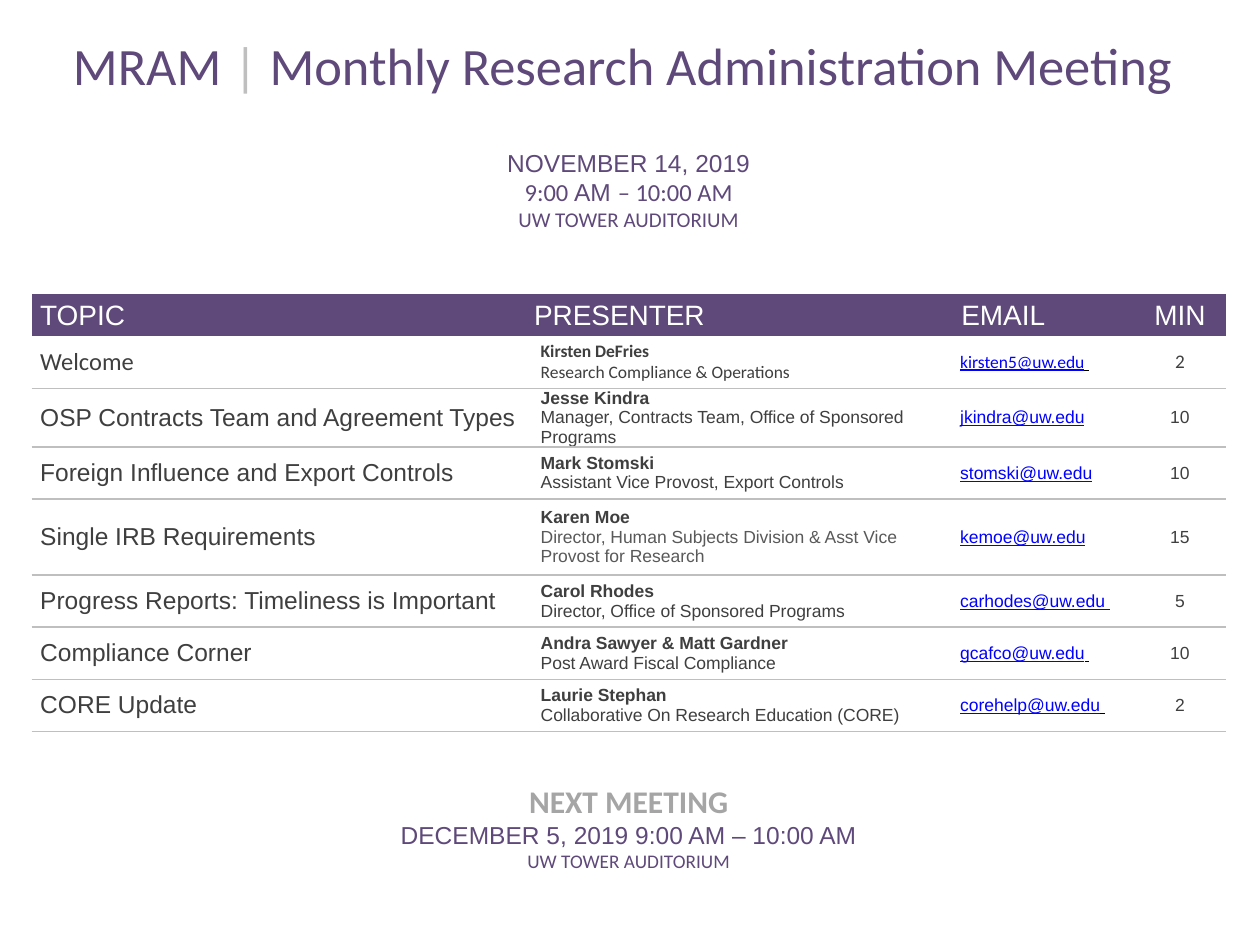
from lxml.etree import SubElement
from pptx import Presentation
from pptx.dml.color import RGBColor
from pptx.enum.text import MSO_ANCHOR, PP_ALIGN
from pptx.oxml.ns import qn
from pptx.util import Pt

PLUM, GRAY, INK, BLUE, WHITE = "5F497A", "BFBFBF", "3F3F3F", "0000FF", "FFFFFF"
SANS, LATO = "Arial", "Calibri"
MID, LOW, TOP = MSO_ANCHOR.MIDDLE, MSO_ANCHOR.BOTTOM, MSO_ANCHOR.TOP
COLS = [282.25, 239.75, 108, 52.5]
ROWS = [44.5, 111.5, 24, 29.75, 33.5, 29.75, 43.5, 29.75, 29.75, 29.75, 81]
HEADS = ["TOPIC", "PRESENTER", " EMAIL", "MIN"]

# Topic, presenter, role, email, blank after it (colour or None), minutes
ITEMS = [
    ("Welcome", "Kirsten DeFries", "Research Compliance & Operations",
     "kirsten5@uw.edu", "000000", "2"),
    ("OSP Contracts Team and Agreement Types", "Jesse Kindra",
     "Manager, Contracts Team, Office of Sponsored Programs",
     "jkindra@uw.edu", None, "10"),
    ("Foreign Influence and Export Controls", "Mark Stomski",
     "Assistant Vice Provost, Export Controls",
     "stomski@uw.edu", None, "10"),
    ("Single IRB Requirements", "Karen Moe",
     "Director, Human Subjects Division & Asst Vice Provost for Research",
     "kemoe@uw.edu", None, "15"),
    ("Progress Reports: Timeliness is Important", "Carol Rhodes",
     "Director, Office of Sponsored Programs",
     "carhodes@uw.edu", BLUE, "5"),
    ("Compliance Corner", "Andra Sawyer & Matt Gardner",
     "Post Award Fiscal Compliance",
     "gcafco@uw.edu", "000000", "10"),
    ("CORE Update", "Laurie Stephan",
     "Collaborative On Research Education (CORE)",
     "corehelp@uw.edu", "000000", "2"),
]


def color(code):
    return RGBColor.from_string(code)


def style(size, name, tint, **more):
    return dict(size=Pt(size), name=name, tint=tint, **more)


def add_run(para, text, form):
    run = para.add_run()
    run.text = text
    for key, value in form.items():
        if key == "tint":
            run.font.color.rgb = color(value)
        else:
            setattr(run.font, key, value)


def add_lines(cell, lines, center=False):
    """Each line is a list of (text, style) pairs."""
    frame = cell.text_frame
    for n, line in enumerate(lines):
        para = frame.add_paragraph() if n else frame.paragraphs[0]
        para.alignment = PP_ALIGN.CENTER if center else PP_ALIGN.LEFT
        for text, form in line:
            add_run(para, text, form)


def set_edges(cell, ruled):
    props = cell._tc.get_or_add_tcPr()
    for side in "LRTB":
        edge = SubElement(props, qn("a:ln" + side), w=str(Pt(1)))
        if side in ruled:
            fill = SubElement(edge, qn("a:solidFill"))
            SubElement(fill, qn("a:srgbClr"), val=GRAY)
        else:
            SubElement(edge, qn("a:noFill"))


def set_cell(cell, fill=WHITE, ruled="", anchor=MID,
             left=5, right=5, top=0, bottom=0):
    form = dict(vertical_anchor=anchor, margin_left=Pt(left),
                margin_right=Pt(right), margin_top=Pt(top),
                margin_bottom=Pt(bottom))
    for key, value in form.items():
        setattr(cell, key, value)
    set_edges(cell, ruled)
    cell.fill.solid()
    cell.fill.fore_color.rgb = color(fill)


def add_band(table, row, lines, **form):
    """Fill a row that spans all the columns."""
    cell = table.cell(row, 0)
    cell.merge(table.cell(row, len(COLS) - 1))
    set_cell(cell, **form)
    add_lines(cell, lines, center=True)


def add_item(table, row, item):
    topic, who, role, mail, blank, mins = item
    first = row == 3
    ruled = "B" if first else "TB"
    font = LATO if first else SANS
    base = style(10, font, INK, bold=False)
    link = dict(base, tint=BLUE, underline=True)
    mark = [(mail, link)]
    if blank:
        mark.append((" ", dict(link, name=SANS, tint=blank)))
    tint = "595959" if who == "Karen Moe" else INK
    parts = [
        ([[(topic, dict(base, size=Pt(14)))]], 5, 5),
        ([[(who, dict(base, bold=True))], [(role, dict(base, tint=tint))]],
         8.75, 8.75),
        ([mark], 8.75, 0),
        ([[(mins, dict(base, size=Pt(11 if first else 10)))]], 5, 5),
    ]
    for col, (lines, left, right) in enumerate(parts):
        cell = table.cell(row, col)
        set_cell(cell, ruled=ruled, left=left, right=right)
        add_lines(cell, lines, center=col == 3)


def add_grid(slide):
    frame = slide.shapes.add_table(len(ROWS), len(COLS), Pt(18), Pt(12.25),
                                   Pt(sum(COLS)), Pt(sum(ROWS)))
    table = frame.table
    table.first_row = table.horz_banding = False
    for col, width in zip(table.columns, COLS):
        col.width = Pt(width)
    for row, height in zip(table.rows, ROWS):
        row.height = Pt(height)
    return table


def main():
    deck = Presentation()
    deck.slide_width, deck.slide_height = Pt(720), Pt(540)
    table = add_grid(deck.slides.add_slide(deck.slide_layouts[6]))

    # Title and date
    big = style(30, LATO, PLUM)
    add_band(table, 0, [[("MRAM ", big), ("|", dict(big, tint=GRAY)),
                         (" Monthly Research Administration Meeting ", big)]],
             anchor=LOW)
    sans, lato = style(14, SANS, PLUM), style(14, LATO, PLUM)
    add_band(table, 1, [
        [("NOVEMBER 14, 2019", sans)],
        [("9:00 ", lato), ("AM ", sans), ("– 10:00 AM", lato)],
        [("UW TOWER AUDITORIUM", dict(lato, size=Pt(12)))],
    ], anchor=LOW, bottom=35)

    # Agenda
    for col, head in enumerate(HEADS):
        cell = table.cell(2, col)
        set_cell(cell, fill=PLUM)
        add_lines(cell, [[(head, style(16, SANS, WHITE))]], center=col == 3)
    for row, item in enumerate(ITEMS, 3):
        add_item(table, row, item)

    # Next meeting
    add_band(table, len(ROWS) - 1, [
        [("NEXT MEETING", style(18, LATO, "A5A5A5", bold=True))],
        [("DECEMBER 5, 2019 9:00 AM – 10:00 AM", sans)],
        [("UW TOWER AUDITORIUM", dict(lato, size=Pt(11)))],
    ], anchor=TOP, ruled="T", top=30)

    deck.save("out.pptx")


if __name__ == "__main__":
    main()
